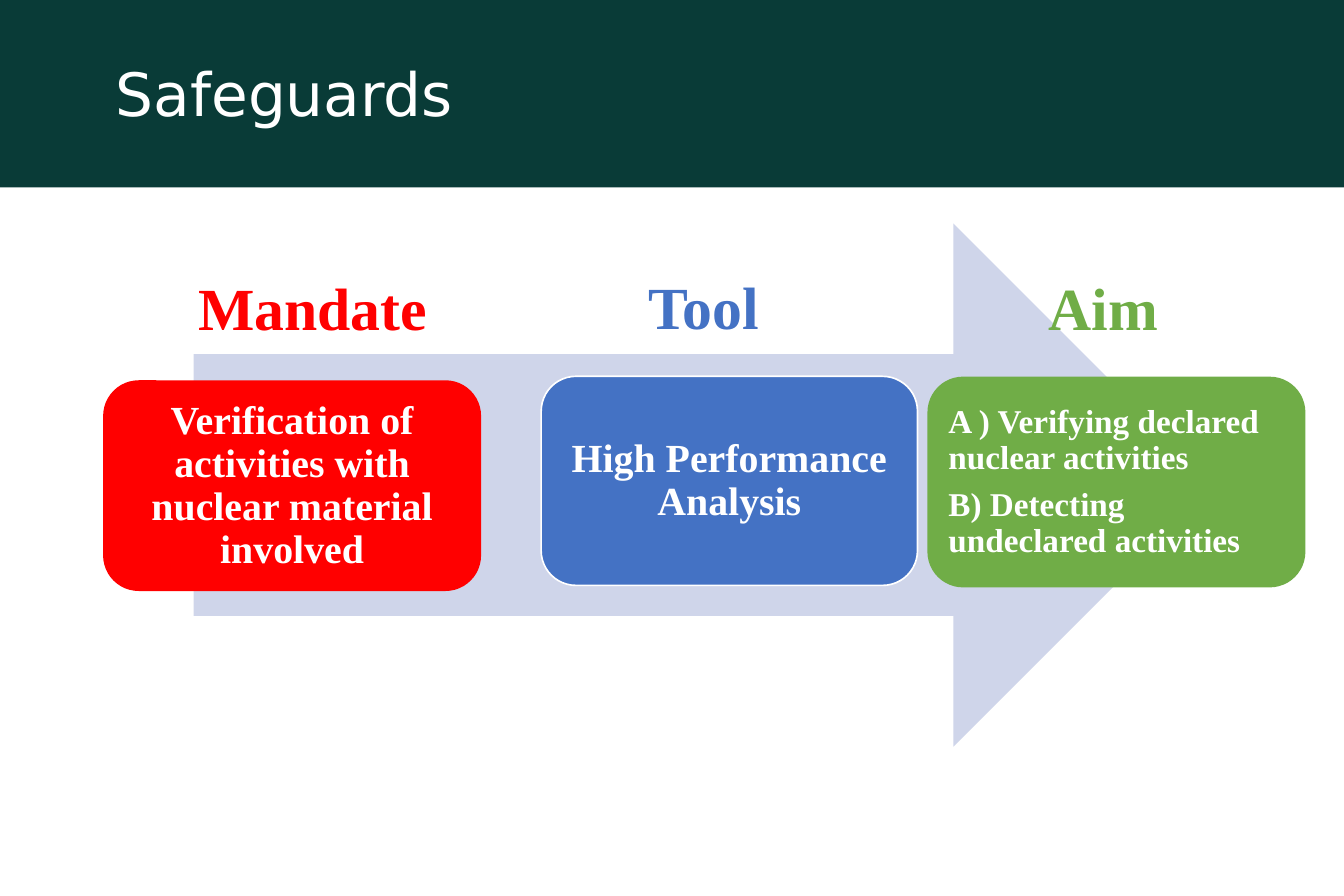
from pptx import Presentation
from pptx.dml.color import RGBColor
from pptx.enum.shapes import MSO_SHAPE as SHAPE
from pptx.enum.text import MSO_ANCHOR as ANCHOR, MSO_AUTO_SIZE as AUTO, PP_ALIGN as ALIGN
from pptx.util import Inches, Pt

WHITE = RGBColor(0xFF, 0xFF, 0xFF)
DARK_GREEN = RGBColor(0x09, 0x3B, 0x37)
PALE_BLUE = RGBColor(0xCF, 0xD5, 0xEA)
RED = RGBColor(0xFF, 0x00, 0x00)
BLUE = RGBColor(0x44, 0x72, 0xC4)
GREEN = RGBColor(0x70, 0xAD, 0x47)


class SlideBuilder:
    """Draws styled elements on a slide divided into 45 columns and 30 rows."""

    COLS, ROWS = 45, 30
    SERIF, SANS = "Times New Roman", "DejaVu Sans"

    def __init__(self, prs):
        self.col = prs.slide_width / self.COLS
        self.row = prs.slide_height / self.ROWS
        self.s = prs.slides.add_slide(prs.slide_layouts[5])

    def area(self, x, y, w, h):
        return [round(n) for n in (x * self.col, y * self.row, w * self.col, h * self.row)]

    def fill_text(self, tf, lines, size, color, font, bold=True, align=ALIGN.LEFT, spacing=1.0, gap=0):
        tf.word_wrap = True
        for i, line in enumerate(lines):
            p = tf.paragraphs[0] if i == 0 else tf.add_paragraph()
            p.text = line
            p.alignment = align
            p.line_spacing = spacing
            p.space_before = Pt(0)
            p.space_after = Pt(gap)
            p.font.name = font
            p.font.size = Pt(size)
            p.font.bold = bold
            p.font.color.rgb = color

    def shape(self, kind, area, fill, line=None):
        sp = self.s.shapes.add_shape(kind, *self.area(*area))
        sp.shadow.inherit = False
        sp.fill.solid()
        sp.fill.fore_color.rgb = fill
        if line is None:
            sp.line.fill.background()
        else:
            sp.line.color.rgb = line
            sp.line.width = Pt(1)
        return sp

    def header(self, text):
        band = self.shape(SHAPE.RECTANGLE, (0, 0, self.COLS, 6.28), DARK_GREEN)
        sp = self.s.shapes.title
        sp._element.addprevious(band._element)
        sp.left, sp.top, sp.width, sp.height = self.area(3.48, 1.96, 40.2, 4.36)
        tf = sp.text_frame
        tf.auto_size = AUTO.NONE
        tf.vertical_anchor = ANCHOR.TOP
        self.fill_text(tf, [text], 36, WHITE, self.SANS, bold=False, spacing=0.9)

    def box(self, x, y, lines, size, fill, line, align):
        sp = self.shape(SHAPE.ROUNDED_RECTANGLE, (x, y, 12.6, 7), fill, line)
        tf = sp.text_frame
        tf.vertical_anchor = ANCHOR.MIDDLE
        inset = Inches(size / 240)
        tf.margin_left = tf.margin_right = tf.margin_top = tf.margin_bottom = inset
        self.fill_text(tf, lines, size, WHITE, self.SERIF, align=align, spacing=0.9, gap=0.35 * size)

    def label(self, x, y, w, text, color):
        sp = self.s.shapes.add_textbox(*self.area(x, y, w, 2.84))
        self.fill_text(sp.text_frame, [text], 36, color, self.SERIF)


def main():
    prs = Presentation()
    prs.slide_width, prs.slide_height = Inches(11.25), Inches(7.5)
    slide = SlideBuilder(prs)
    slide.header("Safeguards")
    slide.shape(SHAPE.RIGHT_ARROW, (6.48, 7.48, 34.2, 17.52), PALE_BLUE)
    slide.box(3.48, 12.76, ["Verification of activities with nuclear material involved"],
              24, RED, RED, ALIGN.CENTER)
    slide.box(18.12, 12.6, ["High Performance Analysis"], 24, BLUE, WHITE, ALIGN.CENTER)
    slide.box(31.08, 12.64, ["A ) Verifying declared nuclear activities",
                             "B) Detecting undeclared activities"],
              20, GREEN, GREEN, ALIGN.LEFT)
    slide.label(6.24, 8.88, 8.72, "Mandate", RED)
    slide.label(21.32, 8.84, 7.92, "Tool", BLUE)
    slide.label(34.72, 8.88, 7.92, "Aim", GREEN)
    prs.save("out.pptx")


if __name__ == "__main__":
    main()
